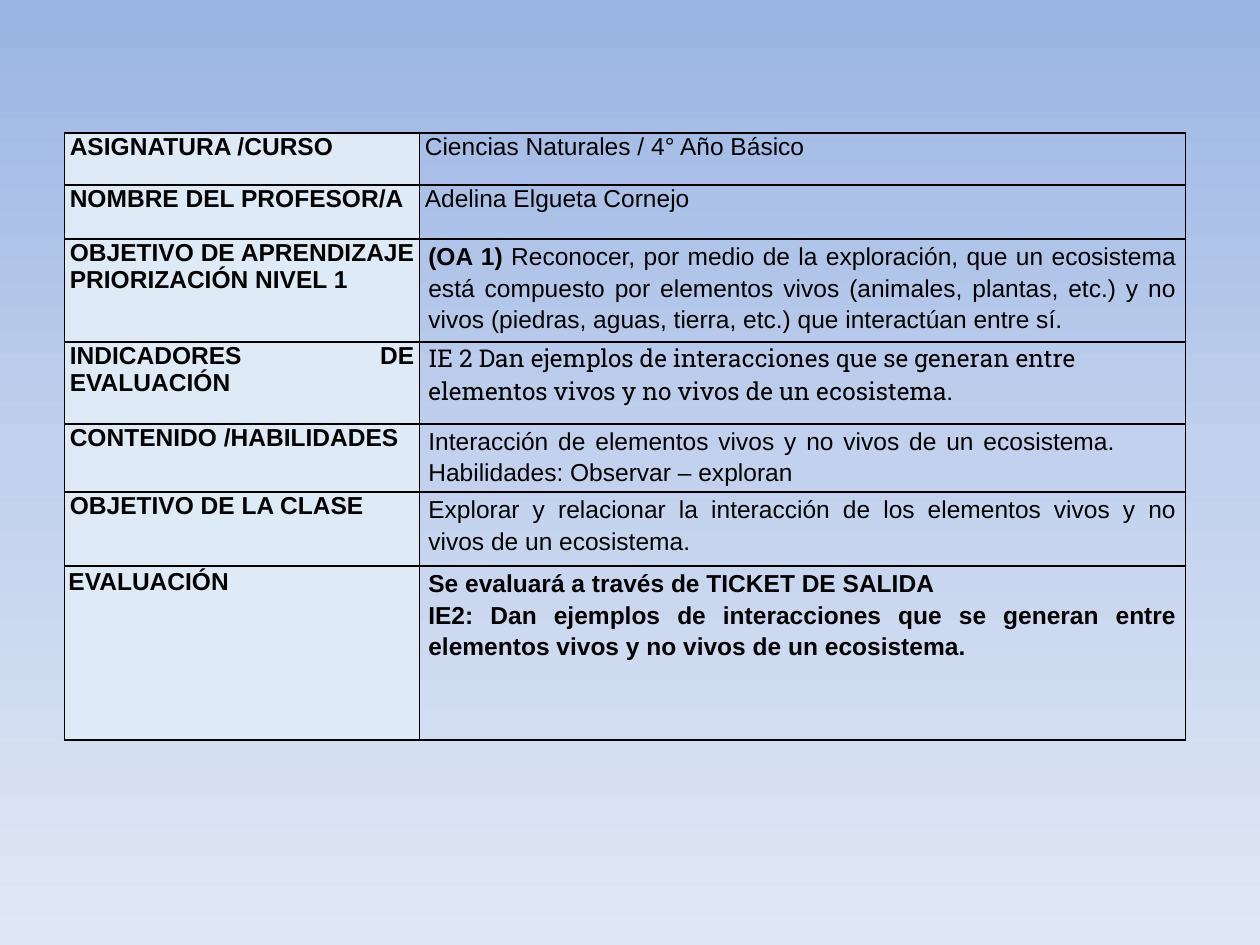
import copy

import pptx
import pptx.dml.color
import pptx.enum.text
import pptx.oxml
import pptx.oxml.ns
import pptx.util

Pt = pptx.util.Pt
ALIGN = pptx.enum.text.PP_ALIGN

THEME = {
    "font": "Arial",
    "slab": "Roboto Slab",
    "size": 14,
    "text": "000000",
    "label_fill": "DEEAF6",
    "border": "000000",
    "border_width": 1,
    "background": [(0, "9AB5E4"), (0.5, "C2D1ED"), (1, "E1E8F5")],
}

PLAIN = {"insets": (3, 0, 3, 0), "spacing": None, "align": ALIGN.JUSTIFY, "font": "font"}
BODY = {**PLAIN, "insets": (5, 0, 5, 0), "spacing": 1.15}
SLAB = {**BODY, "spacing": None, "align": ALIGN.LEFT, "font": "slab"}
NARROW = {**BODY, "insets": (5, 0, 40, 0)}
LAST_LABEL = {**PLAIN, "insets": (2.2, 1.4, 2.2, 1.4)}

ROWS = [
    (29.7, "ASIGNATURA /CURSO", PLAIN, PLAIN,
     [[("Ciencias Naturales / 4° Año Básico", False)]]),
    (30.9, "NOMBRE DEL PROFESOR/A", PLAIN, PLAIN,
     [[("Adelina Elgueta Cornejo", False)]]),
    (58.9, "OBJETIVO DE APRENDIZAJE PRIORIZACIÓN NIVEL 1", PLAIN, BODY,
     [[("(OA 1) ", True),
       ("Reconocer, por medio de la exploración, que un ecosistema está compuesto "
        "por elementos vivos (animales, plantas, etc.) y no vivos (piedras, aguas, "
        "tierra, etc.) que interactúan entre sí.", False)]]),
    (46.8, "INDICADORES DE EVALUACIÓN", PLAIN, SLAB,
     [[("IE 2 Dan ejemplos de interacciones que se generan entre elementos vivos "
        "y no vivos de un ecosistema.", False)]]),
    (38.9, "CONTENIDO /HABILIDADES", PLAIN, NARROW,
     [[("Interacción de elementos vivos y no vivos de un ecosistema. "
        "Habilidades: Observar – exploran", False)]]),
    (42.3, "OBJETIVO DE LA CLASE", PLAIN, BODY,
     [[("Explorar y relacionar la interacción de los elementos vivos y no vivos "
        "de un ecosistema.", False)]]),
    (99.4, "EVALUACIÓN", LAST_LABEL, BODY,
     [[("Se evaluará a través de TICKET DE SALIDA", True)],
      [("IE2: Dan ejemplos de interacciones que se generan entre elementos vivos "
        "y no vivos de un ecosistema.", True)]]),
]
COLUMNS = [202.9, 437.6]
LEFT, TOP = 36.9, 76


def rgb(value):
    return pptx.dml.color.RGBColor.from_string(value)


def paint_background(page):
    fill = page.background.fill
    fill.gradient()
    fill.gradient_angle = 270
    stop_list = page.background._cSld.find(".//" + pptx.oxml.ns.qn("a:gsLst"))
    stop_list.append(copy.deepcopy(stop_list[-1]))
    for stop, (position, color) in zip(fill.gradient_stops, THEME["background"]):
        stop.position = position
        stop.color.rgb = rgb(color)


def draw_borders(cell):
    properties = cell._tc.get_or_add_tcPr()
    for index, side in enumerate(("lnL", "lnR", "lnT", "lnB")):
        line = pptx.oxml.parse_xml(
            f'<a:{side} {pptx.oxml.ns.nsdecls("a")} w="{Pt(THEME["border_width"])}">'
            f'<a:solidFill><a:srgbClr val="{THEME["border"]}"/></a:solidFill></a:{side}>')
        properties.insert(index, line)


def fill_cell(cell, paragraphs, style, color=None):
    if color:
        cell.fill.solid()
        cell.fill.fore_color.rgb = rgb(color)
    else:
        cell.fill.background()
    draw_borders(cell)
    (cell.margin_left, cell.margin_top,
     cell.margin_right, cell.margin_bottom) = map(Pt, style["insets"])
    frame = cell.text_frame
    for index, spans in enumerate(paragraphs):
        para = frame.add_paragraph() if index else frame.paragraphs[0]
        para.alignment = style["align"]
        para.line_spacing = style["spacing"]
        for text, bold in spans:
            span = para.add_run()
            span.text = text
            span.font.name = THEME[style["font"]]
            span.font.size = Pt(THEME["size"])
            span.font.bold = bold
            span.font.color.rgb = rgb(THEME["text"])


def main():
    deck = pptx.Presentation()
    deck.slide_width, deck.slide_height = Pt(720), Pt(540)
    page = deck.slides.add_slide(deck.slide_layouts[6])
    paint_background(page)

    height = sum(row[0] for row in ROWS)
    table = page.shapes.add_table(
        len(ROWS), len(COLUMNS), Pt(LEFT), Pt(TOP), Pt(sum(COLUMNS)), Pt(height)).table
    table.first_row = False
    table.horz_banding = False
    for column, width in zip(table.columns, COLUMNS):
        column.width = Pt(width)
    for index, (row_height, label, label_style, style, paragraphs) in enumerate(ROWS):
        table.rows[index].height = Pt(row_height)
        fill_cell(table.cell(index, 0), [[(label, True)]], label_style, THEME["label_fill"])
        fill_cell(table.cell(index, 1), paragraphs, style)

    deck.save("out.pptx")


if __name__ == "__main__":
    main()
